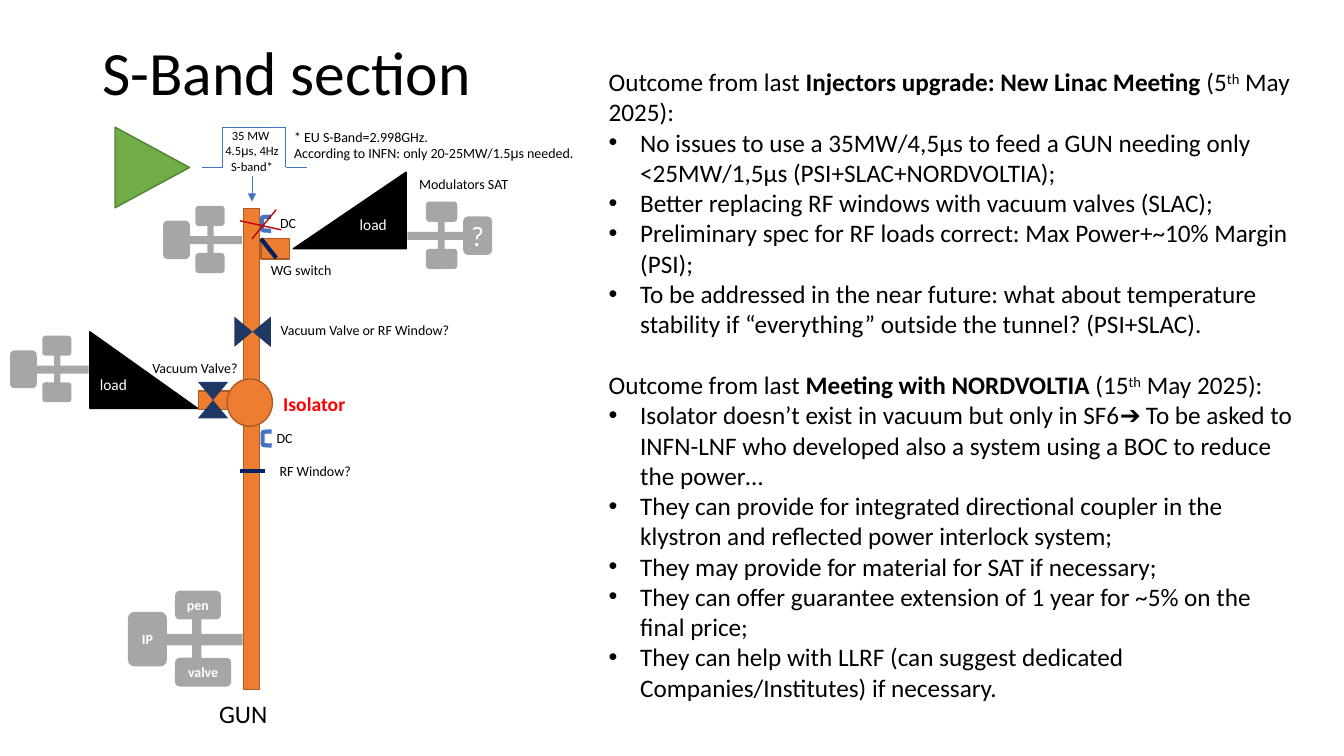
import pptx
import pptx.util
import pptx.dml.color
import pptx.enum.shapes
import pptx.enum.text
import pptx.oxml
import pptx.oxml.ns

Pt = pptx.util.Pt
RGB = pptx.dml.color.RGBColor
KIND = pptx.enum.shapes.MSO_SHAPE
ALIGN = pptx.enum.text.PP_ALIGN
ANCHOR = pptx.enum.text.MSO_ANCHOR

BLACK = RGB(0x00, 0x00, 0x00)
WHITE = RGB(0xFF, 0xFF, 0xFF)
RED = RGB(0xFF, 0x00, 0x00)
CROSS = RGB(0xC0, 0x00, 0x00)
ORANGE = RGB(0xED, 0x7D, 0x31)
RUST = RGB(0xAF, 0x5C, 0x24)
GREEN = RGB(0x70, 0xAD, 0x47)
MOSS = RGB(0x53, 0x81, 0x35)
GRAY = RGB(0xA6, 0xA6, 0xA6)
BLUE = RGB(0x44, 0x72, 0xC4)
NAVY = RGB(0x00, 0x20, 0x60)
INK = RGB(0x20, 0x38, 0x64)

MEETINGS = [
    ("Injectors upgrade: New Linac Meeting", " (5", " May 2025):", [
        "No issues to use a 35MW/4,5μs to feed a GUN needing only <25MW/1,5μs (PSI+SLAC+NORDVOLTIA);",
        "Better replacing RF windows with vacuum valves (SLAC);",
        "Preliminary spec for RF loads correct: Max Power+~10% Margin (PSI);",
        "To be addressed in the near future: what about temperature stability if “everything” "
        "outside the tunnel? (PSI+SLAC).",
    ]),
    ("Meeting with NORDVOLTIA ", "(15", " May 2025):", [
        "Isolator doesn’t exist in vacuum but only in SF6➔ To be asked to INFN-LNF who developed "
        "also a system using a BOC to reduce the power…",
        "They can provide for integrated directional coupler in the klystron and reflected power "
        "interlock system;",
        "They may provide for material for SAT if necessary;",
        "They can offer guarantee extension of 1 year for ~5% on the final price;",
        "They can help with LLRF (can suggest dedicated Companies/Institutes) if necessary.",
    ]),
]


def style(run, size, color=BLACK, bold=False, face="Calibri"):
    run.font.name, run.font.size, run.font.bold = face, Pt(size), bold
    run.font.color.rgb = color


def write(frame, text, size, color=BLACK, bold=False, align=ALIGN.LEFT):
    """Fill a frame line by line, with the Greek letter in Arial."""
    for i, line in enumerate(text.split("\n")):
        par = frame.paragraphs[0] if i == 0 else frame.add_paragraph()
        par.alignment = align
        for bit in filter(None, line.partition("μ")):
            run = par.add_run()
            run.text = bit
            style(run, size, color, bold, "Arial" if bit == "μ" else "Calibri")


def label(slide, box, text, size=10, wrap=True, **look):
    frame = slide.shapes.add_textbox(*map(Pt, box)).text_frame
    frame.word_wrap = wrap
    write(frame, text, size, **look)
    return frame


def shape(slide, kind, box, fill=None, edge=None, width=1, turn=0):
    item = slide.shapes.add_shape(kind, *map(Pt, box))
    item.shadow.inherit = False
    item.rotation = turn
    if fill is None:
        item.fill.background()
    else:
        item.fill.solid()
        item.fill.fore_color.rgb = fill
    if edge is None:
        item.line.fill.background()
    else:
        item.line.color.rgb = edge
        item.line.width = Pt(width)
    return item


def line(slide, start, end, color, width):
    item = slide.shapes.add_connector(
        pptx.enum.shapes.MSO_CONNECTOR.STRAIGHT, *map(Pt, start + end))
    item.line.color.rgb = color
    item.line.width = Pt(width)
    pptx.oxml.ns.qn("a:effectLst")
    item._element.spPr.append(pptx.oxml.parse_xml(
        '<a:effectLst xmlns:a="http://schemas.openxmlformats.org/drawingml/2006/main"/>'))
    return item


def load(slide, box, apex):
    """Black right triangle; apex 0 stands at the left, 1 at the right."""
    item = shape(slide, KIND.ISOSCELES_TRIANGLE, box, BLACK, BLACK)
    item.adjustments[0] = apex
    item.text_frame.vertical_anchor = ANCHOR.TOP
    write(item.text_frame, "load", 11, WHITE)


def bowtie(slide, x, y, turns):
    """Two triangles meeting at x, y; turns are those of the first and second."""
    wide, tall = 21.6, 13
    for side, turn in zip((-1, 1), turns):
        dx, dy = (side * tall / 2, 0) if turn % 180 else (0, side * tall / 2)
        box = (x + dx - wide / 2, y + dy - tall / 2, wide, tall)
        shape(slide, KIND.ISOSCELES_TRIANGLE, box, INK, turn=turn)


def coupler(slide, x, y, gap):
    shape(slide, KIND.LEFT_BRACKET, (x, y, 6.5, 10), edge=BLUE, width=3)
    label(slide, (x + gap, y - 5, 26, 19.4), "DC", wrap=False)


def pump(slide, box, texts=("", "", ""), size=10, bold=True, wide=(0.37, 0.37), mirror=False):
    """Pump block, gauge and valve on a cross of bars, as shares of the box."""
    left, top, width, height = box
    rect, soft = KIND.RECTANGLE, KIND.ROUNDED_RECTANGLE
    parts = [
        (rect, 0.08, 0.45, 0.92, 0.12, ""),
        (soft, 0, 0.22, 0.34, 0.57, texts[0]),
        (soft, 0.41, 0, wide[0], 0.3, texts[1]),
        (soft, 0.41, 0.7, wide[1], 0.3, texts[2]),
        (rect, 0.56, 0.24, 0.08, 0.54, ""),
    ]
    for kind, x, y, w, h, text in parts:
        x = 1 - x - w if mirror else x
        item = shape(slide, kind, (left + x * width, top + y * height, w * width, h * height), GRAY)
        if text:
            item.text_frame.word_wrap = False
            item.text_frame.vertical_anchor = ANCHOR.MIDDLE
            write(item.text_frame, text, size, WHITE, bold, ALIGN.CENTER)


def title(slide, box):
    frame = label(slide, box, "S-Band section", 44)
    frame.vertical_anchor = ANCHOR.MIDDLE
    frame.paragraphs[0].line_spacing = 0.9


def notes(slide, box):
    frame = slide.shapes.add_textbox(*map(Pt, box)).text_frame
    frame.word_wrap = True
    for i, (name, day, rest, points) in enumerate(MEETINGS):
        par = frame.add_paragraph() if i else frame.paragraphs[0]
        par.space_before = Pt(22 * i)
        for text in ("Outcome from last ", name, day, "th", rest):
            run = par.add_run()
            run.text = text
            style(run, 18, bold=text == name)
            if text == "th":
                run._r.get_or_add_rPr().set("baseline", "30000")
        for point in points:
            par = frame.add_paragraph()
            par.text = point
            style(par.runs[0], 18)
            props = par._p.get_or_add_pPr()
            props.set("marL", str(Pt(22.5)))
            props.set("indent", str(-Pt(22.5)))
            for tag, key, value in (("a:buFont", "typeface", "Arial"), ("a:buChar", "char", "•")):
                mark = pptx.oxml.parse_xml(
                    f'<{tag} xmlns:a="http://schemas.openxmlformats.org/drawingml/2006/main"/>')
                mark.set(key, value)
                props.append(mark)


def gun(slide, box):
    """Vertical waveguide down to the gun, with its valve, window and pump."""
    l, t, w, h = box
    pump(slide, (l, t + 273, w, 68.4), ("IP", "pen", "valve"), wide=(0.4, 0.49))
    shape(slide, KIND.RECTANGLE, (l + 82.5, t, 11.5, h), ORANGE, RUST)
    bowtie(slide, l + 89, t + 88, (90, 270))
    label(slide, (l + 102, t + 77, 137.5, 19.4), "Vacuum Valve or RF Window?", wrap=False)
    coupler(slide, l + 96.2, t + 159.2, 2.9)
    line(slide, (l + 80.4, t + 187.2), (l + 97.6, t + 187.2), NAVY, 3)
    label(slide, (l + 101.2, t + 178, 66.2, 19.4), "RF Window?", wrap=False)
    label(slide, (l + 58, t + h + 3, 54.7, 28.8), "GUN", 18, wrap=False)


def source(slide, box):
    """Amplifier and the pulse it sends."""
    l, t, w, h = box
    shape(slide, KIND.ISOSCELES_TRIANGLE, (l, t + 5, 57.6, 53.3), GREEN, MOSS, turn=90)
    low, high = t + 31.5, t + 2.7
    pulse = [(l + 64, low), (l + 79, low), (l + 79, high),
             (l + 124, high), (l + 124, low), (l + 139, low)]
    for start, end in zip(pulse, pulse[1:]):
        line(slide, start, end, BLUE, 0.5)
    label(slide, (l + 73.4, t, 53.3, 40.3), "35 MW \n4.5μs, 4Hz \nS-band*", 9, align=ALIGN.CENTER)
    arrow = line(slide, (l + 100, t + 38), (l + 100, t + h), BLUE, 0.5)
    arrow.line._get_or_add_ln().append(pptx.oxml.parse_xml(
        '<a:tailEnd xmlns:a="http://schemas.openxmlformats.org/drawingml/2006/main" type="triangle"/>'))
    label(slide, (l + 123, t, w - 123, 31.7),
          "* EU S-Band=2.998GHz.\nAccording to INFN: only 20-25MW/1.5μs needed.")


def switch(slide, box):
    """Waveguide switch with its load and a pump at each side."""
    l, t, w, h = box
    pump(slide, (l + 0.6, t + 26, 56.2, 48.2))
    shape(slide, KIND.RECTANGLE, (l + 70.5, t + 49.6, 20.2, 14.4), ORANGE, RUST)
    load(slide, (l + 93.5, t + 2, 80.6, 54.7), 1)
    label(slide, (l + 176.3, t + 0.7, 80.6, 19.4), "Modulators SAT")
    label(slide, (l + 70.5, t + h - 19.4, 64, 19.4), "WG switch")
    line(slide, (l + 70.5, t + 49.6), (l + 81.3, t + 63.3), NAVY, 3)
    coupler(slide, l + 71.2, t + 33.8, 5.8)
    pump(slide, (l + 175, t + 23, 60.5, 48.2), ("?", "", ""), 20, False, mirror=True)
    line(slide, (l + 81.3, t + 28.8), (l + 64, t + 49.6), CROSS, 1)
    line(slide, (l + 55.4, t + 36.7), (l + 85, t + 43.2), CROSS, 1)


def isolator(slide, box):
    """Isolator with its load, valve and pump on the left."""
    l, t, w, h = box
    load(slide, (l + 57, t, 77, 54.7), 0)
    shape(slide, KIND.RECTANGLE, (l + 134.8, t + 42.4, 31.7, 13), ORANGE, RUST)
    pump(slide, (l, t + 2.8, 56.2, 47.5))
    shape(slide, KIND.OVAL, (l + 155, t + h - 33.8, 32.4, 33.8), ORANGE, RUST)
    label(slide, (l + 188, t + 39.5, w - 188, 24.5), "Isolator", 14, False, color=RED, bold=True)
    label(slide, (l + 94.5, t + 16.4, 115.2, 31.7), "Vacuum Valve?")
    bowtie(slide, l + 145, t + 48.8, (180, 0))


def main():
    deck = pptx.Presentation()
    deck.slide_width, deck.slide_height = Pt(960), Pt(540)
    slide = deck.slides.add_slide(deck.slide_layouts[6])
    title(slide, (66, 1.5, 828, 104.4))
    notes(slide, (427.7, 44, 506, 465))
    gun(slide, (91.4, 149, 82, 343.4))
    source(slide, (80, 88, 340, 56))
    switch(slide, (116, 121, 257, 82))
    isolator(slide, (7.2, 237, 247, 67.5))
    deck.save("out.pptx")


if __name__ == "__main__":
    main()
